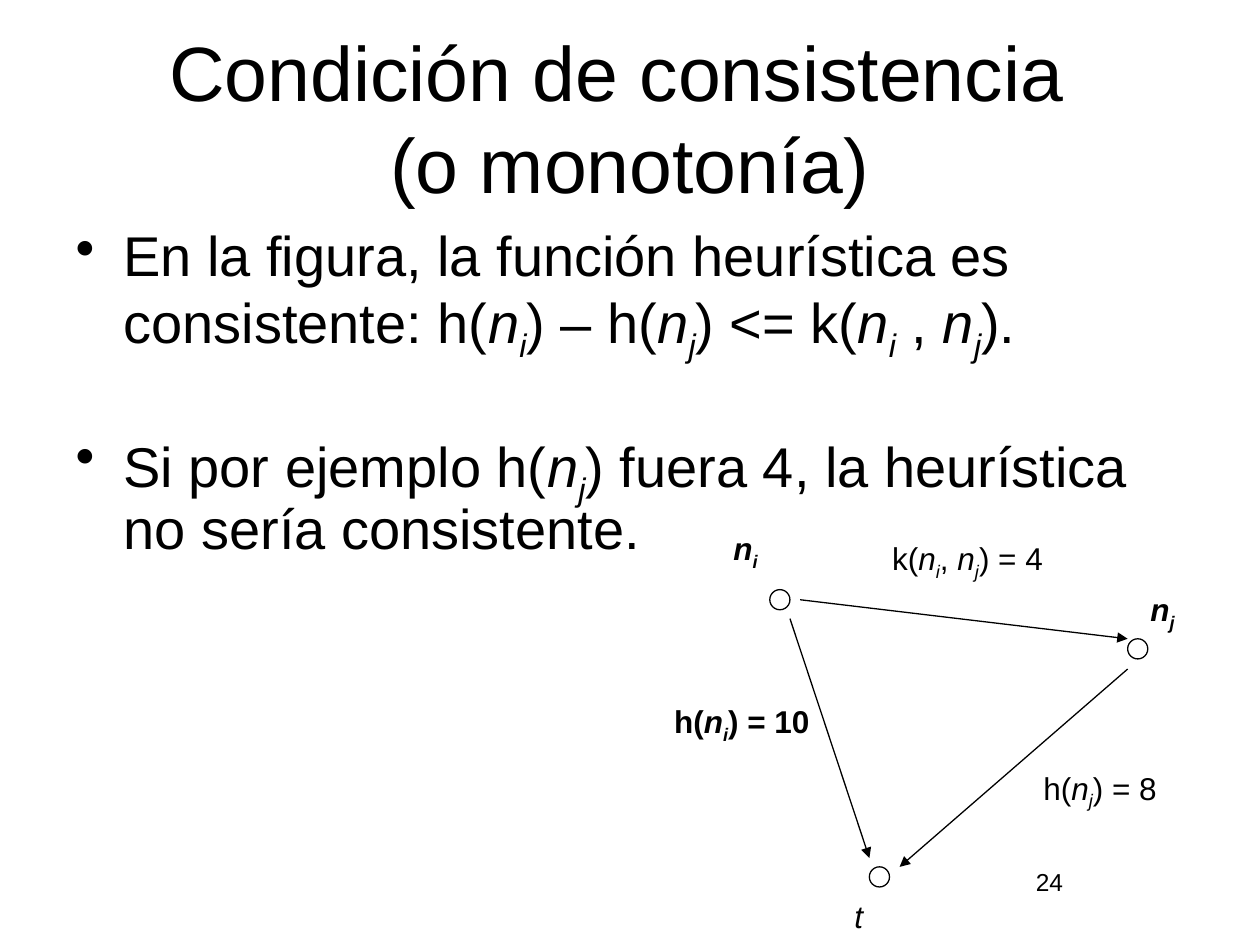
"""Build a slide on the consistency condition of a heuristic function."""
from lxml import etree
from pptx import Presentation
from pptx import util as u
from pptx.dml.color import RGBColor
from pptx.enum import shapes, text
from pptx.oxml import ns

BLACK = RGBColor(0, 0, 0)
WHITE = RGBColor(255, 255, 255)


def write(para, words, size=18, bold=False, italic=False, left=0.04, first=0):
    """Write words, where n_i stands for an italic n with a subscript i."""
    properties = para._p.get_or_add_pPr()
    properties.set("marL", str(u.Inches(left)))
    properties.set("indent", str(u.Inches(first)))
    spans = []
    chunks = words.split("_")
    for index, chunk in enumerate(chunks):
        if index:
            spans.append((chunk[0], True, True))
            chunk = chunk[1:]
        if index < len(chunks) - 1:
            spans += [(chunk[:-1], italic, False), (chunk[-1], True, False)]
        else:
            spans.append((chunk, italic, False))
    for content, slanted, lowered in spans:
        if content:
            span = para.add_run()
            span.text = content
            span.font.name = "Arial"
            span.font.size = u.Pt(size)
            span.font.color.rgb = BLACK
            span.font.bold = bold
            span.font.italic = slanted
            if lowered:
                span.font._element.set("baseline", "-25000")


def set_frame(box, margins, wrap=True, anchor=text.MSO_ANCHOR.TOP):
    """Set the margins, wrapping and anchor of a box and return its frame."""
    frame = box.text_frame
    frame.auto_size = text.MSO_AUTO_SIZE.NONE
    frame.word_wrap = wrap
    frame.vertical_anchor = anchor
    frame.margin_left, frame.margin_top, frame.margin_right, frame.margin_bottom = map(u.Inches, margins)
    return frame


deck = Presentation()
deck.slide_width, deck.slide_height = u.Inches(10), u.Inches(7.5)
page = deck.slides.add_slide(deck.slide_layouts[5])

title = page.shapes.title
title.left, title.top, title.width, title.height = map(u.Inches, (0.5, 0.1, 9, 1.65))
para = set_frame(title, (0.06, 0.06, 0.1, 0.06), anchor=text.MSO_ANCHOR.MIDDLE).paragraphs[0]
para.alignment = text.PP_ALIGN.CENTER
write(para, "Condición de consistencia ", size=44, first=-0.04)
para.add_line_break()
write(para, "(o monotonía)", size=44, first=-0.04)

body = page.shapes.add_textbox(*map(u.Inches, (0.5, 1.75, 9, 5.75)))
frame = set_frame(body, (0.06, 0.06, 0.1, 0.06))
points = [
    ("En la figura, la función heurística es consistente: h(n_i) – h(n_j) <= k(n_i , n_j).", 4.8),
    ("Si por ejemplo h(n_j) fuera 4, la heurística no sería consistente.", 43),
]
for index, (words, space) in enumerate(points):
    para = frame.add_paragraph() if index else frame.paragraphs[0]
    para.line_spacing = 0.9
    para.space_before = u.Pt(space)
    write(para, words, size=32, left=0.42, first=-0.38)
    bullet = etree.SubElement(para._p.get_or_add_pPr(), ns.qn("a:buChar"))
    bullet.set("char", "•")

number = page.shapes.add_textbox(*map(u.Inches, (8.16, 6.83, 0.34, 0.33)))
para = set_frame(number, (0.1, 0.05, 0.1, 0.05), wrap=False).paragraphs[0]
para.alignment = text.PP_ALIGN.CENTER
write(para, "24", size=14, left=0)

for left, top in [(6.11, 4.68), (8.95, 5.07), (6.9, 6.88)]:
    node = page.shapes.add_shape(
        shapes.MSO_SHAPE.OVAL, *map(u.Inches, (left, top, 0.16, 0.16)))
    node.shadow.inherit = False
    node.fill.solid()
    node.fill.fore_color.rgb = WHITE
    node.line.color.rgb = BLACK
    node.line.width = u.Pt(0.75)

edges = [(6.27, 4.91, 6.9, 6.81), (8.95, 5.31, 7.14, 6.88), (6.35, 4.76, 8.95, 5.07)]
for ends in edges:
    edge = page.shapes.add_connector(shapes.MSO_CONNECTOR.STRAIGHT, *map(u.Inches, ends))
    edge.line.color.rgb = BLACK
    edge.line.width = u.Pt(0.75)
    etree.SubElement(edge.line._get_or_add_ln(), ns.qn("a:tailEnd")).set("type", "triangle")
    etree.SubElement(edge._element.spPr, ns.qn("a:effectLst"))

labels = [
    ("n_i", 5.78, 4.2, 0.29, True, True),
    ("n_j", 9.09, 4.68, 0.29, True, True),
    ("t", 6.74, 7.12, 0.16, False, True),
    ("k(n_i, n_j) = 4", 7.04, 4.28, 1.32, False, False),
    ("h(n_i) = 10", 5.31, 5.57, 1.18, True, False),
    ("h(n_j) = 8", 8.24, 6.1, 1, False, False),
]
for words, left, top, width, bold, italic in labels:
    label = page.shapes.add_textbox(*map(u.Inches, (left, top, width, 0.3)))
    frame = set_frame(label, (0, 0, 0.04, 0), wrap=False)
    write(frame.paragraphs[0], words, bold=bold, italic=italic)

deck.save("out.pptx")
